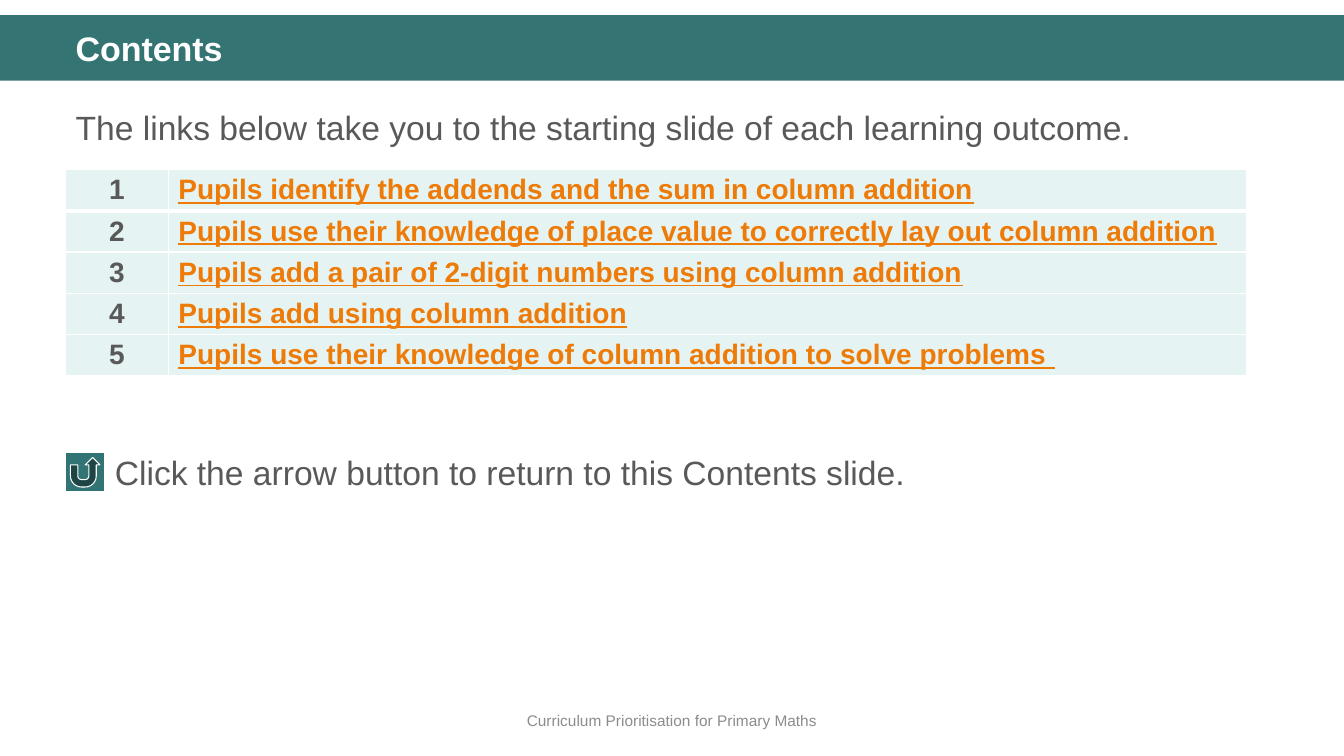
from lxml.etree import SubElement
from pptx import Presentation
from pptx.dml.color import RGBColor as Rgb
from pptx.enum.shapes import MSO_SHAPE as Shape
from pptx.enum.text import MSO_ANCHOR as Anchor, MSO_AUTO_SIZE as AutoSize, PP_ALIGN as Align
from pptx.oxml import parse_xml
from pptx.oxml.ns import nsdecls, qn
from pptx.util import Inches, Pt

COLOURS = {"band": "347574", "button": "327473", "cell": "E5F3F2", "text": "595959",
           "link": "EE7B08", "footer": "8C8C8C", "white": "FFFFFF"}
WIDTH, HEIGHT = 13.33, 7.5
LEFT = 0.65
TABLE_TOP, ROW_HEIGHT, COLUMN_WIDTHS = 1.68, 0.41, (1.02, 10.69)

OUTCOMES = [
    "Pupils identify the addends and the sum in column addition",
    "Pupils use their knowledge of place value to correctly lay out column addition",
    "Pupils add a pair of 2-digit numbers using column addition",
    "Pupils add using column addition",
    "Pupils use their knowledge of column addition to solve problems ",
]


def colour(name):
    return Rgb.from_string(COLOURS[name])


def write(frame, text, size=24, ink="text", bold=False, underline=False,
          align=Align.LEFT, anchor=Anchor.TOP, spacing=1.0):
    """Put one formatted paragraph in a text frame."""
    frame.word_wrap = True
    frame.vertical_anchor = anchor
    paragraph = frame.paragraphs[0]
    paragraph.alignment = align
    paragraph.line_spacing = spacing
    paragraph.space_before = Pt(0)
    run = paragraph.add_run()
    run.text = text
    font = run.font
    font.name, font.size = "Arial", Pt(size)
    font.bold, font.underline = bold, underline
    font.color.rgb = colour(ink)
    return paragraph


class ContentsSlide:
    def __init__(self, presentation):
        self.slide = presentation.slides.add_slide(presentation.slide_layouts[1])
        self.shapes = self.slide.shapes

    def block(self, kind, box, fill, line=None):
        shape = self.shapes.add_shape(kind, *map(Inches, box))
        shape.shadow.inherit = False
        shape.fill.solid()
        shape.fill.fore_color.rgb = colour(fill)
        if line:
            shape.line.color.rgb = colour(line)
            shape.line.width = Pt(0.75)
        else:
            shape.line.fill.background()

    def placeholder(self, index, box, text, **style):
        shape = self.slide.placeholders[index]
        shape.left, shape.top, shape.width, shape.height = map(Inches, box)
        shape.text_frame.auto_size = AutoSize.NONE
        paragraph = write(shape.text_frame, text, **style)
        # Plain paragraph: no bullet and no hanging indent
        properties = paragraph._p.get_or_add_pPr()
        properties.set("marL", "0")
        properties.set("indent", "0")
        SubElement(properties, qn("a:buNone"))
        # Bring in front of the parts drawn so far
        self.shapes._spTree.append(shape._element)

    def text(self, box, text, **style):
        shape = self.shapes.add_textbox(*map(Inches, box))
        write(shape.text_frame, text, **style)

    def borders(self, cell, top, bottom):
        properties = cell._tc.get_or_add_tcPr()
        widths = {"lnL": 1, "lnR": 1, "lnT": top, "lnB": bottom}
        for position, (side, width) in enumerate(widths.items()):
            properties.insert(position, parse_xml(
                f'<a:{side} {nsdecls("a")} w="{Pt(width)}"><a:solidFill>'
                f'<a:srgbClr val="{COLOURS["white"]}"/></a:solidFill></a:{side}>'))

    def table(self, outcomes):
        table = self.shapes.add_table(
            len(outcomes), len(COLUMN_WIDTHS), Inches(LEFT), Inches(TABLE_TOP),
            Inches(sum(COLUMN_WIDTHS)), Inches(ROW_HEIGHT * len(outcomes))).table
        table.first_row = table.horz_banding = False
        for column, width in zip(table.columns, COLUMN_WIDTHS):
            column.width = Inches(width)
        number_style = dict(align=Align.CENTER)
        link_style = dict(ink="link", underline=True)
        for row, outcome in enumerate(outcomes):
            table.rows[row].height = Inches(ROW_HEIGHT)
            for column, (text, style) in enumerate(
                    [(str(row + 1), number_style), (outcome, link_style)]):
                cell = table.cell(row, column)
                cell.margin_top = cell.margin_bottom = Inches(0.04)
                cell.fill.solid()
                cell.fill.fore_color.rgb = colour("cell")
                write(cell.text_frame, text, size=20, bold=True, **style)
                cell.vertical_anchor = Anchor.MIDDLE
                # The first row is closed by a thicker rule
                self.borders(cell, top=3 if row == 1 else 1, bottom=3 if row == 0 else 1)


def main():
    presentation = Presentation()
    presentation.slide_width, presentation.slide_height = Inches(WIDTH), Inches(HEIGHT)
    page = ContentsSlide(presentation)

    # Title band and footer
    page.block(Shape.RECTANGLE, (0, 0.15, WIDTH, 0.65), "band")
    page.text((0, 6.95, WIDTH, 0.4), "Curriculum Prioritisation for Primary Maths",
              size=11, ink="footer", align=Align.CENTER, anchor=Anchor.MIDDLE)

    # Introduction and learning outcomes
    page.placeholder(1, (LEFT, 0.93, 12.18, 3.51),
                     "The links below take you to the starting slide of each learning outcome.",
                     spacing=1.2)
    page.table(OUTCOMES)

    # Return button with its explanation
    page.block(Shape.ACTION_BUTTON_RETURN, (LEFT, 4.49, 0.39, 0.39), "button", line="white")
    page.text((1.04, 4.43, 11.32, 0.5), "Click the arrow button to return to this Contents slide.")

    # Title
    page.placeholder(0, (LEFT, 0.27, 12.18, 0.47), "Contents",
                     size=24.3, ink="white", bold=True, spacing=0.9)

    presentation.save("out.pptx")


if __name__ == "__main__":
    main()
